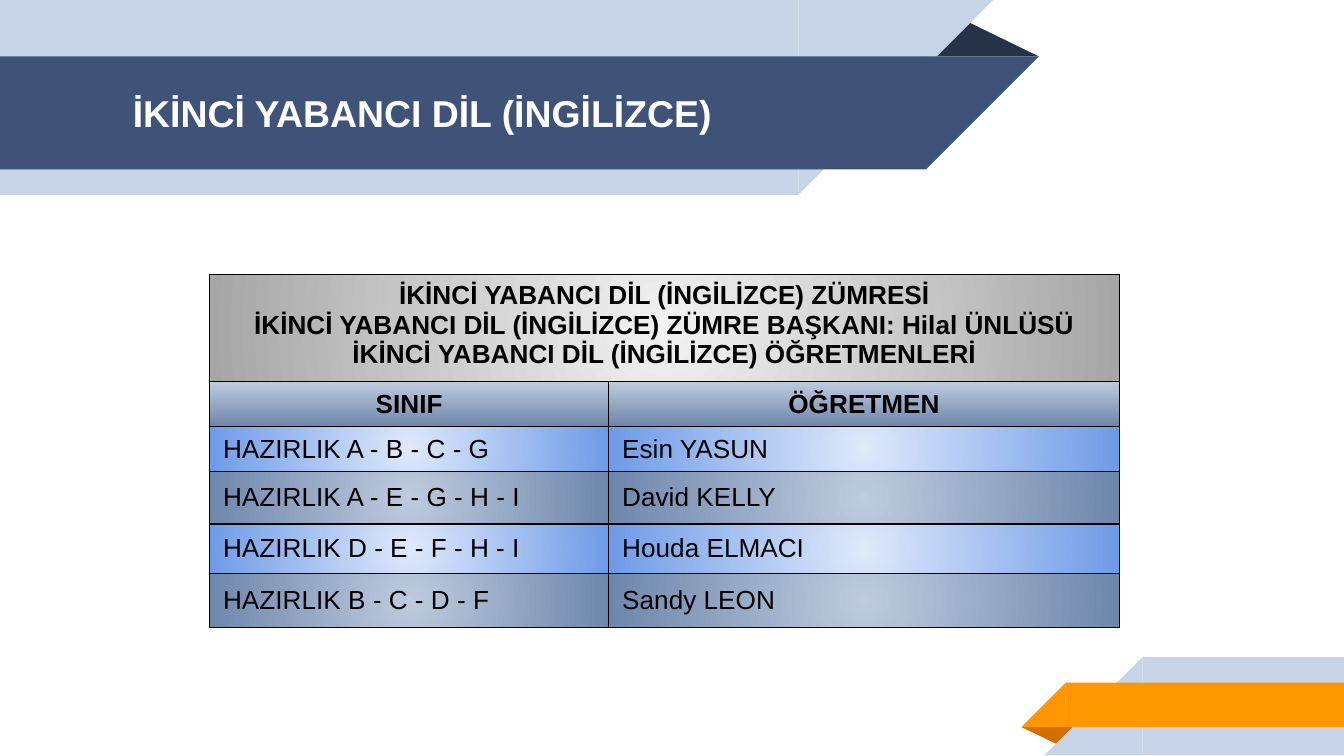
from dataclasses import dataclass

from pptx import Presentation
from pptx import oxml
from pptx import util as u
from pptx.dml import color
from pptx.enum import shapes, text
from pptx.oxml import ns


@dataclass(frozen=True)
class Theme:
    """Colours, font and type sizes of the slide."""
    navy: str = "3F5378"
    fold: str = "263248"
    pale: str = "C7D3E6"
    orange: str = "FF9800"
    rust: str = "D26F00"
    white: str = "FFFFFF"
    black: str = "000000"
    grey_fade: tuple = ("F2F2F2", "A6A6A6")
    slate_fade: tuple = ("BECBDE", "6E87AB")
    blue_fade: tuple = ("DFE9FB", "6E9BE7")
    font: str = "Arial"
    title_size: int = 20
    table_size: int = 14
    border: float = 0.75


THEME = Theme()
KIND = shapes.MSO_SHAPE
WIDTH = 10
HEIGHT = WIDTH * 9 / 16
HEADING = [
    "İKİNCİ YABANCI DİL (İNGİLİZCE) ZÜMRESİ",
    "İKİNCİ YABANCI DİL (İNGİLİZCE) ZÜMRE BAŞKANI: Hilal ÜNLÜSÜ",
    "İKİNCİ YABANCI DİL (İNGİLİZCE) ÖĞRETMENLERİ",
]
TEACHERS = [
    ("HAZIRLIK A - B - C - G", "Esin YASUN"),
    ("HAZIRLIK A - E - G - H - I", "David KELLY"),
    ("HAZIRLIK D - E - F - H - I", "Houda ELMACI"),
    ("HAZIRLIK B - C - D - F", "Sandy LEON"),
]
COLUMNS = [2.97, 0.42, 1.69, 1.69]
ROWS = [0.8, 0.33, 0.33, 0.39, 0.37, 0.4]


def add_block(page, kind, left, top, width, height, fill, rotation=0):
    """Add a flat preset shape without outline."""
    block = page.shapes.add_shape(kind, *map(u.Inches, (left, top, width, height)))
    block.shadow.inherit = False
    block.fill.solid()
    block.fill.fore_color.rgb = color.RGBColor.from_string(fill)
    block.line.fill.background()
    block.rotation = rotation
    return block


def add_fold(page, left, top, width, height, fill, rotation=0):
    """Add the dark triangle behind a ribbon's tip."""
    fold = add_block(page, KIND.ISOSCELES_TRIANGLE, left, top, width, height, fill, rotation)
    fold.adjustments[0] = 0.324


def add_top_ribbon(page, top, height, body, fill):
    """Add a ribbon from the left edge with a slanted right end."""
    add_block(page, KIND.RECTANGLE, 0, top, body, height, fill)
    add_block(page, KIND.RIGHT_TRIANGLE, body, top, height, height, fill, 90)


def add_bottom_ribbon(page, top, height, body_left, fill):
    """Add a ribbon to the right edge with a slanted left end."""
    add_block(page, KIND.RECTANGLE, body_left, top, WIDTH - body_left, height, fill)
    add_block(page, KIND.RIGHT_TRIANGLE, body_left - height, top, height, height, fill, 270)


def write_text(frame, lines, *, size, ink, bold=False, align=text.PP_ALIGN.LEFT):
    """Write one formatted paragraph for each line."""
    for index, line in enumerate(lines):
        para = frame.add_paragraph() if index else frame.paragraphs[0]
        para.alignment = align
        span = para.add_run()
        span.text = line
        span.font.name = THEME.font
        span.font.size = u.Pt(size)
        span.font.bold = bold
        span.font.color.rgb = color.RGBColor.from_string(ink)


def add_title(page, title):
    """Add the title on the navy ribbon."""
    box = page.shapes.add_textbox(*map(u.Inches, (0.89, 0.42, 5.75, 0.84)))
    frame = box.text_frame
    frame.word_wrap = True
    frame.vertical_anchor = text.MSO_ANCHOR.MIDDLE
    frame.margin_left = frame.margin_right = u.Inches(0.1)
    frame.margin_top = frame.margin_bottom = u.Inches(0.1)
    write_text(frame, [title], size=THEME.title_size, ink=THEME.white, bold=True)


def paint_cell(cell, fade, radial):
    """Give a cell thin borders and a two-colour gradient."""
    props = cell._tc.get_or_add_tcPr()
    space = ns.nsdecls("a")
    for side in "LRTB":
        props.append(oxml.parse_xml(
            f'<a:ln{side} {space} w="{u.Pt(THEME.border)}"><a:solidFill>'
            f'<a:srgbClr val="{THEME.black}"/></a:solidFill></a:ln{side}>'))
    stops = "".join(
        f'<a:gs pos="{place}"><a:srgbClr val="{tint}"/></a:gs>'
        for place, tint in zip((0, 100000), fade))
    centre = " ".join(f'{edge}="50000"' for edge in "ltrb")
    shade = (f'<a:path path="circle"><a:fillToRect {centre}/></a:path>'
             if radial else '<a:lin ang="5400000" scaled="0"/>')
    props.append(oxml.parse_xml(
        f'<a:gradFill {space} rotWithShape="1"><a:gsLst>{stops}</a:gsLst>{shade}</a:gradFill>'))


def fill_row(table, row, entries, fade, *, radial=True, anchor=text.MSO_ANCHOR.MIDDLE, **style):
    """Merge, paint and write one table row."""
    last = len(COLUMNS) - 1
    table.cell(row, len(entries) - 1).merge(table.cell(row, last))
    for column in range(len(COLUMNS)):
        paint_cell(table.cell(row, column), fade, radial)
    for column, lines in enumerate(entries):
        cell = table.cell(row, column)
        cell.vertical_anchor = anchor
        write_text(cell.text_frame, lines, size=THEME.table_size, ink=THEME.black, **style)


def add_teacher_table(page):
    """Add the table of classes and teachers."""
    area = map(u.Inches, (1.56, 2.04, sum(COLUMNS), sum(ROWS)))
    table = page.shapes.add_table(len(ROWS), len(COLUMNS), *area).table
    table.first_row = table.horz_banding = False
    for column, width in zip(table.columns, COLUMNS):
        column.width = u.Inches(width)
    for row, height in zip(table.rows, ROWS):
        row.height = u.Inches(height)
    header = {"bold": True, "align": text.PP_ALIGN.CENTER}
    fill_row(table, 0, [HEADING], THEME.grey_fade, anchor=text.MSO_ANCHOR.TOP, **header)
    fill_row(table, 1, [["SINIF"], ["ÖĞRETMEN"]], THEME.slate_fade, radial=False, **header)
    for index, (group, teacher) in enumerate(TEACHERS):
        fade = THEME.slate_fade if index % 2 else THEME.blue_fade
        fill_row(table, index + 2, [[group], [teacher]], fade)


def main():
    """Build and save the slide."""
    deck = Presentation()
    deck.slide_width, deck.slide_height = u.Inches(WIDTH), u.Inches(HEIGHT)
    page = deck.slides.add_slide(deck.slide_layouts[6])
    add_fold(page, 6.88, 0.14, 0.85, 0.28, THEME.fold)
    add_top_ribbon(page, 0, 1.45, 5.94, THEME.pale)
    add_top_ribbon(page, 0.42, 0.84, 6.89, THEME.navy)
    add_fold(page, 7.6, 5.41, 0.43, 0.14, THEME.rust, 180)
    add_bottom_ribbon(page, 4.89, 0.73, 8.5, THEME.pale)
    add_bottom_ribbon(page, 5.08, 0.33, 7.93, THEME.orange)
    add_title(page, "İKİNCİ YABANCI DİL (İNGİLİZCE)")
    add_teacher_table(page)
    deck.save("out.pptx")


if __name__ == "__main__":
    main()
